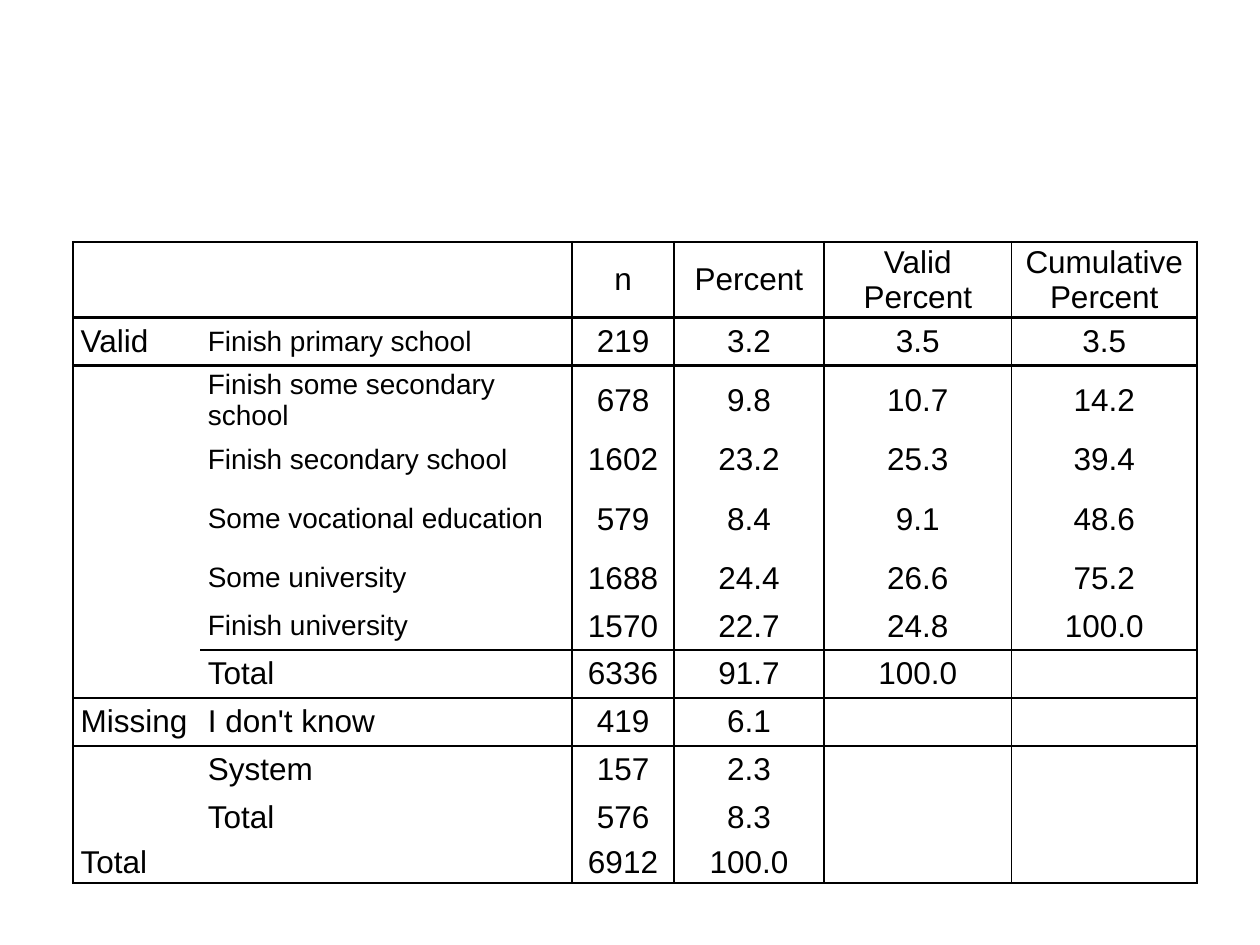
from lxml.etree import SubElement as Sub
from pptx import Presentation
from pptx.dml.color import RGBColor
from pptx.enum.text import MSO_ANCHOR as Anchor, PP_ALIGN as Align
from pptx.oxml.ns import qn
from pptx.util import Inches, Pt

BLACK = RGBColor(0, 0, 0)
WHITE = RGBColor(255, 255, 255)
FONT = "Arial"
PLAIN = "{2D5ABB26-0587-4C30-8999-92F81FD0307C}"

WIDTHS = [1.01, 2.95, 0.81, 1.19, 1.49, 1.47]
HEIGHTS = [0.6, 0.38, 0.56, 0.38, 0.56] + [0.38] * 6 + [0.33]
ROWS = [
    ["", "", "n", "Percent", "Valid Percent", "Cumulative Percent"],
    ["Valid", "Finish primary school", "219", "3.2", "3.5", "3.5"],
    ["", "Finish some secondary school", "678", "9.8", "10.7", "14.2"],
    ["", "Finish secondary school", "1602", "23.2", "25.3", "39.4"],
    ["", "Some vocational education", "579", "8.4", "9.1", "48.6"],
    ["", "Some university", "1688", "24.4", "26.6", "75.2"],
    ["", "Finish university", "1570", "22.7", "24.8", "100.0"],
    ["", "Total", "6336", "91.7", "100.0", ""],
    ["Missing", "I don't know", "419", "6.1", "", ""],
    ["", "System", "157", "2.3", "", ""],
    ["", "Total", "576", "8.3", "", ""],
    ["Total", "", "6912", "100.0", "", ""],
]
LEVELS = range(1, 7)
SPANS = [0, 11]
UPRIGHT = {0: 1.5, 2: 1.5, 3: 1, 4: 1, 5: 1, 6: 1.5}
LEVEL = {0: 1.5, 1: 1.5, 7: 1, 8: 1, 12: 1.5}


def add_edge(cell, side, width):
    line = Sub(cell._tc.get_or_add_tcPr(), qn(f"a:ln{side}"), w=str(Pt(width)))
    fill = Sub(line, qn("a:solidFill"))
    Sub(fill, qn("a:srgbClr"), val=str(BLACK))


def add_edges(cell, row, col):
    def level(edge):
        return None if edge == 7 and col == 0 else LEVEL.get(edge)

    edges = {"L": UPRIGHT.get(col), "R": UPRIGHT.get(col + 1),
             "T": level(row), "B": level(row + 1)}
    for side, width in edges.items():
        if width:
            add_edge(cell, side, width)


def fill_cell(cell, row, col, text):
    cell.margin_left = cell.margin_right = Inches(0.06)
    cell.margin_top = cell.margin_bottom = 0
    cell.vertical_anchor = Anchor.MIDDLE
    add_edges(cell, row, col)
    cell.fill.solid()
    cell.fill.fore_color.rgb = WHITE
    if not text:
        return
    cell.text_frame.text = text
    para = cell.text_frame.paragraphs[0]
    para.alignment = Align.CENTER if col > 1 else Align.LEFT
    font = para.runs[0].font
    font.name = FONT
    font.size = Pt(16 if col == 1 and row in LEVELS else 18)
    font.color.rgb = BLACK


def add_grid(slide, left, top, width, height):
    frame = slide.shapes.add_table(
        len(ROWS), len(WIDTHS), left, top, width, height)
    table = frame.table
    table.first_row = table.horz_banding = False
    table._tbl.tblPr.find(qn("a:tableStyleId")).text = PLAIN
    for column, size in zip(table.columns, WIDTHS):
        column.width = Inches(size)
    for line, size in zip(table.rows, HEIGHTS):
        line.height = Inches(size)
    for row, texts in enumerate(ROWS):
        for col, text in enumerate(texts):
            fill_cell(table.cell(row, col), row, col, text)
    for row in SPANS:
        table.cell(row, 0).merge(table.cell(row, 1))


def main():
    deck = Presentation()
    deck.slide_width = Inches(10)
    deck.slide_height = Inches(7.5)
    slide = deck.slides.add_slide(deck.slide_layouts[6])
    add_grid(slide, Inches(0.58), Inches(1.92), Inches(8.92), Inches(5.08))
    deck.save("out.pptx")


if __name__ == "__main__":
    main()
